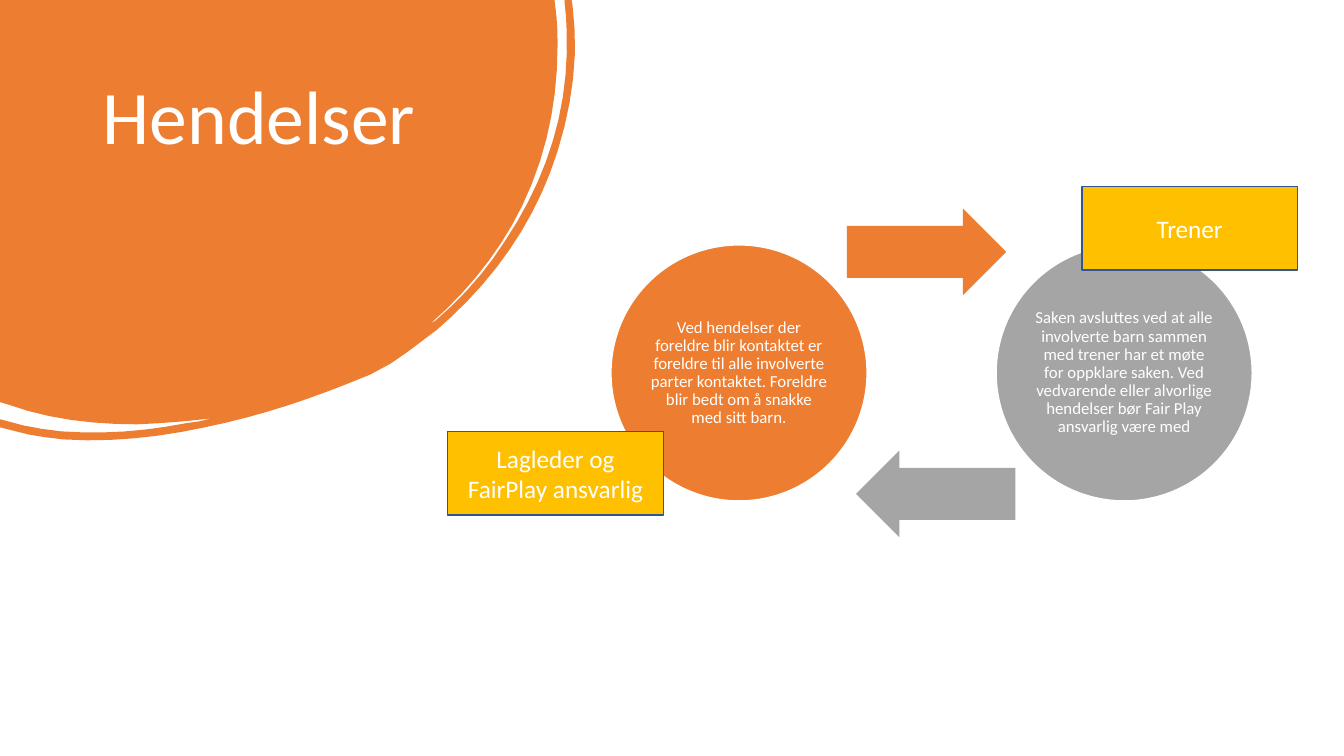
from dataclasses import dataclass
from math import ceil, dist

from pptx import Presentation
from pptx.dml.color import RGBColor
from pptx.enum.shapes import MSO_SHAPE
from pptx.enum.text import MSO_ANCHOR, MSO_AUTO_SIZE, PP_ALIGN
from pptx.shapes.autoshape import Shape
from pptx.slide import Slide
from pptx.text.text import TextFrame
from pptx.util import Emu, Pt

EMU_PER_PX = 9144
CHORD = 24
FONT = "Calibri"
WHITE, ORANGE, GREY, YELLOW, NAVY = "FFFFFF", "ED7D31", "A5A5A5", "FFC000", "325491"

BLOB_START = (0, 0)
BLOB_SEGMENTS = [
    (550, 0), (552, 17),
    (553, 26, 553, 36, 553, 45), (553, 101, 542, 154, 518, 204),
    (496, 249, 465, 288, 427, 321), (429, 321, 430, 319, 432, 318),
    (459, 295, 482, 269, 501, 239), (543, 176, 565, 107, 562, 30),
    (562, 21, 561, 12, 560, 3),
    (560, 0), (567, 0), (568, 7),
    (574, 54, 568, 102, 553, 150), (533, 214, 497, 268, 448, 314),
    (439, 323, 429, 331, 419, 338), (409, 346, 399, 353, 387, 361),
    (375, 369, 360, 375, 344, 381), (299, 399, 252, 414, 203, 424),
    (157, 434, 110, 439, 63, 436), (45, 434, 28, 432, 12, 427),
    (0, 424), (0, 416), (4, 417),
    (23, 423, 42, 426, 61, 428), (103, 431, 143, 428, 184, 420),
    (189, 420, 193, 419, 198, 418), (202, 417, 206, 416, 210, 415),
    (186, 418, 161, 420, 136, 421), (92, 421, 48, 416, 7, 401),
    (0, 399),
]


@dataclass(frozen=True)
class Circle:
    """A process circle with its explanation."""

    left: int
    fill: str
    text: str


@dataclass(frozen=True)
class Arrow:
    """An arrow between the circles."""

    left: int
    top: int
    fill: str
    rotation: int


@dataclass(frozen=True)
class Role:
    """A label naming who is responsible."""

    left: int
    top: int
    text: str


CIRCLES = [
    Circle(606, ORANGE, "Ved hendelser der foreldre blir kontaktet er foreldre til alle "
           "involverte parter kontaktet. Foreldre blir bedt om å snakke med sitt barn."),
    Circle(988, GREY, "Saken avsluttes ved at alle involverte barn sammen med trener har et "
           "møte for oppklare saken. Ved vedvarende eller alvorlige hendelser bør Fair Play "
           "ansvarlig være med"),
]
ARROWS = [Arrow(840, 207, ORANGE, 0), Arrow(849, 447, GREY, 180)]
ROLES = [Role(444, 428, "Lagleder og FairPlay ansvarlig"), Role(1073, 185, "Trener")]


def px(length: float) -> Emu:
    """Turn px into EMU."""
    return Emu(round(length * EMU_PER_PX))


def color(value: str) -> RGBColor:
    """Turn a hex string into a colour."""
    return RGBColor.from_string(value)


def paint(shape: Shape, fill: str, line: str = "") -> None:
    """Set fill and outline without a shadow."""
    shape.shadow.inherit = False
    shape.fill.solid()
    shape.fill.fore_color.rgb = color(fill)
    if line:
        shape.line.color.rgb = color(line)
        shape.line.width = Pt(1)
    else:
        shape.line.fill.background()


def write(frame: TextFrame, text: str, size: int, align: PP_ALIGN, anchor: MSO_ANCHOR,
          spacing: float = 1.0) -> None:
    """Write one formatted paragraph of white text."""
    frame.text = text
    frame.word_wrap = True
    frame.auto_size = MSO_AUTO_SIZE.NONE
    frame.vertical_anchor = anchor
    paragraph = frame.paragraphs[0]
    paragraph.alignment = align
    paragraph.line_spacing = spacing
    font = paragraph.runs[0].font
    font.name, font.size = FONT, Pt(size)
    font.color.rgb = color(WHITE)


def trace(start: tuple[int, int], segments: list[tuple[int, ...]]) -> list[tuple[float, float]]:
    """Flatten straight and cubic segments into as few points as look smooth."""
    points: list[tuple[float, float]] = [start]
    for segment in segments:
        if len(segment) == 2:
            points.append(segment)
            continue
        x0, y0 = points[-1]
        x1, y1, x2, y2, x3, y3 = segment
        steps = ceil(dist((x0, y0), (x3, y3)) / CHORD)
        for step in range(1, steps + 1):
            t = step / steps
            a, b, c, d = (1 - t) ** 3, 3 * t * (1 - t) ** 2, 3 * t * t * (1 - t), t ** 3
            points.append((a * x0 + b * x1 + c * x2 + d * x3,
                           a * y0 + b * y1 + c * y2 + d * y3))
    return points


def add_heading(slide: Slide) -> None:
    """Place the title on top of the orange blob."""
    start, *outline = [(px(x), px(y)) for x, y in trace(BLOB_START, BLOB_SEGMENTS)]
    builder = slide.shapes.build_freeform(*start)
    builder.add_line_segments(outline, close=True)
    blob = builder.convert_to_shape()
    paint(blob, ORANGE)

    title = slide.shapes.title
    title.element.addprevious(blob.element)
    title.left, title.top, title.width, title.height = map(px, (92, 74, 352, 222))
    write(title.text_frame, "Hendelser", 54, PP_ALIGN.LEFT, MSO_ANCHOR.TOP, 0.9)


def add_circle(slide: Slide, circle: Circle) -> None:
    """Draw a circle and the explanation inside it."""
    disc = slide.shapes.add_shape(
        MSO_SHAPE.OVAL, *map(px, (circle.left, 243, 254, 254)))
    paint(disc, circle.fill, WHITE)
    explanation = slide.shapes.add_textbox(*map(px, (circle.left + 37, 280, 180, 180)))
    frame = explanation.text_frame
    write(frame, circle.text, 12, PP_ALIGN.CENTER, MSO_ANCHOR.MIDDLE, 0.9)
    frame.margin_left = frame.margin_right = px(1)
    frame.margin_top = frame.margin_bottom = px(1)


def add_arrow(slide: Slide, arrow: Arrow) -> None:
    """Draw an arrow between the circles."""
    pointer = slide.shapes.add_shape(
        MSO_SHAPE.RIGHT_ARROW, *map(px, (arrow.left, arrow.top, 158, 86)))
    paint(pointer, arrow.fill)
    pointer.rotation = arrow.rotation
    pointer.adjustments[0], pointer.adjustments[1] = 0.6, 0.5


def add_role(slide: Slide, role: Role) -> None:
    """Draw a label naming who is responsible."""
    label = slide.shapes.add_shape(
        MSO_SHAPE.RECTANGLE, *map(px, (role.left, role.top, 214, 83)))
    paint(label, YELLOW, NAVY)
    write(label.text_frame, role.text, 18, PP_ALIGN.CENTER, MSO_ANCHOR.MIDDLE)


def main() -> None:
    """Build and save the slide."""
    deck = Presentation()
    deck.slide_width, deck.slide_height = px(1333), px(750)
    slide = deck.slides.add_slide(deck.slide_layouts[5])
    add_heading(slide)
    for circle, arrow in zip(CIRCLES, ARROWS):
        add_circle(slide, circle)
        add_arrow(slide, arrow)
    for role in ROLES:
        add_role(slide, role)
    deck.save("out.pptx")


if __name__ == "__main__":
    main()
